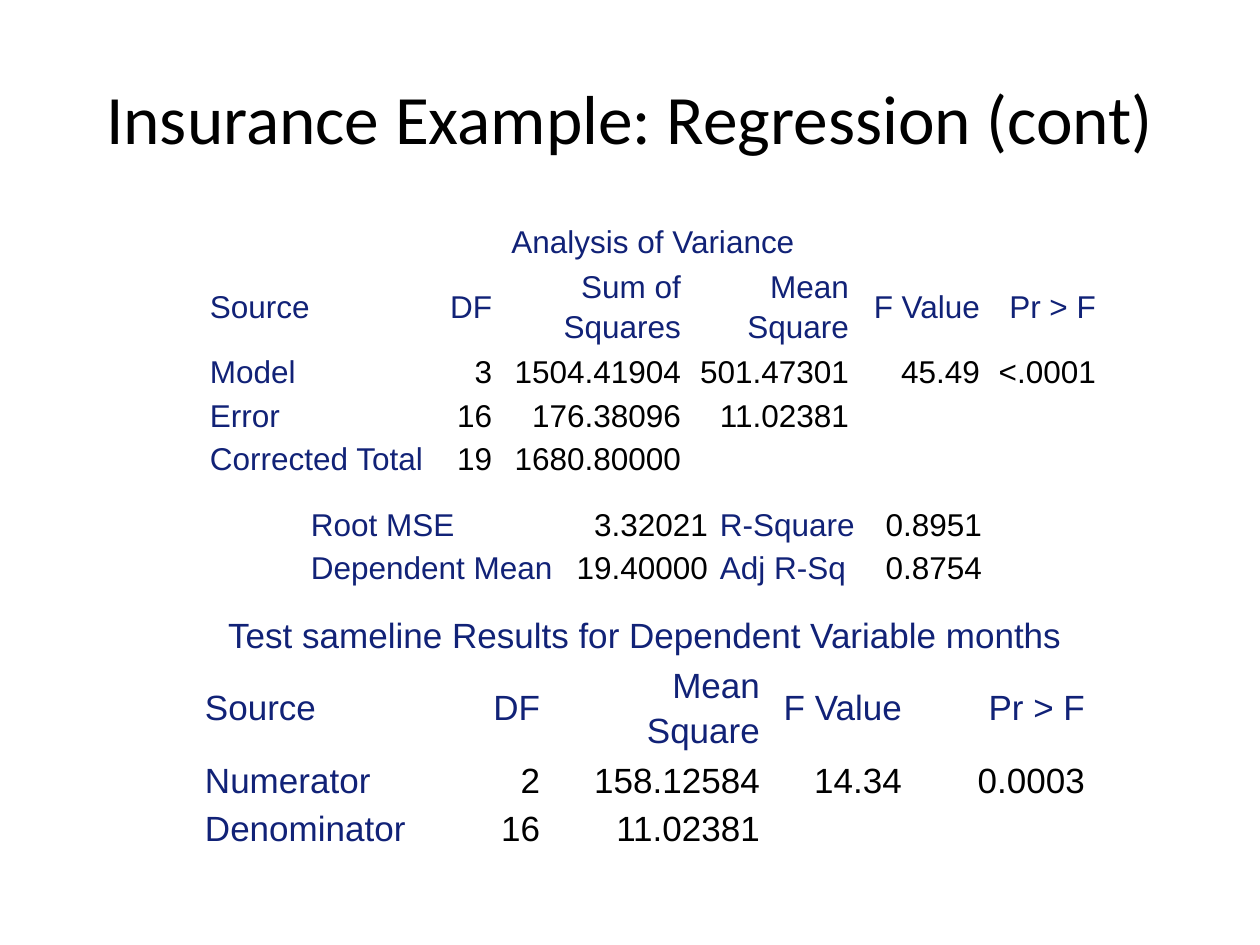
from pptx import Presentation
from pptx import util as u
from pptx.dml import color
from pptx.enum import text

SCALE = 914400 / 126
NAVY, BLACK = "112277", "000000"

ANOVA_ROWS = [
    ["Analysis of Variance"],
    ["Source", "DF", "Sum of\nSquares", "Mean\nSquare", "F Value", "Pr > F"],
    ["Model", "3", "1504.41904", "501.47301", "45.49", "<.0001"],
    ["Error", "16", "176.38096", "11.02381"],
    ["Corrected Total", "19", "1680.80000"],
]
FIT_ROWS = [
    ["Root MSE", "3.32021", "R-Square", "0.8951"],
    ["Dependent Mean", "19.40000", "Adj R-Sq", "0.8754"],
]
TEST_ROWS = [
    ["Test sameline Results for Dependent Variable months"],
    ["Source", "DF", "Mean\nSquare", "F Value", "Pr > F"],
    ["Numerator", "2", "158.12584", "14.34", "0.0003"],
    ["Denominator", "16", "11.02381"],
]


def px(value):
    """Turn px into EMU."""
    return u.Emu(round(value * SCALE))


def rgb(value):
    """Turn a hex string into a colour."""
    return color.RGBColor.from_string(value)


def apply(target, values):
    """Set each named attribute on the target."""
    for name, value in values.items():
        setattr(target, name, value)


def write(paragraph, words, size, font, hue, align):
    """Write formatted words into a paragraph."""
    paragraph.text = words
    paragraph.alignment = align
    for run in paragraph.runs:
        apply(run.font, {"size": u.Pt(size), "name": font})
        run.font.color.rgb = rgb(hue)


def add_title(slide, box, words):
    """Place the slide title in its box."""
    frame = slide.shapes.add_textbox(*map(px, box)).text_frame
    apply(frame, {"word_wrap": True, "vertical_anchor": text.MSO_ANCHOR.MIDDLE})
    write(frame.paragraphs[0], words, 39.6, "Calibri", BLACK, text.PP_ALIGN.CENTER)


def fill_cell(cell, words, size, align):
    """Format one cell, with figures in black and labels in navy."""
    cell.fill.background()
    apply(cell, {"margin_left": px(6), "margin_right": px(6), "margin_top": 0,
                 "margin_bottom": 0, "vertical_anchor": text.MSO_ANCHOR.MIDDLE})
    if words:
        paragraph = cell.text_frame.paragraphs[0]
        hue = BLACK if words[0] in "<0123456789" else NAVY
        write(paragraph, words, size, "Arial", hue, align)
        apply(paragraph, {"line_spacing": 1.15, "space_before": u.Pt(5),
                          "space_after": u.Pt(5)})


def add_results(slide, left, top, widths, line, size, rows, left_columns=(0,)):
    """Place a results table, merging any row that holds only a heading."""
    heights = [line * (2 if any("\n" in words for words in row) else 1) for row in rows]
    frame = slide.shapes.add_table(len(rows), len(widths), px(left), px(top),
                                   px(sum(widths)), px(sum(heights)))
    table = frame.table
    apply(table, {"first_row": False, "horz_banding": False})
    for column, width in zip(table.columns, widths):
        column.width = px(width)
    for r, (row, height) in enumerate(zip(rows, heights)):
        table.rows[r].height = px(height)
        heading = len(row) == 1
        if heading:
            table.cell(r, 0).merge(table.cell(r, len(widths) - 1))
        for c in range(len(widths)):
            align = text.PP_ALIGN.LEFT if c in left_columns else text.PP_ALIGN.RIGHT
            if heading:
                align = text.PP_ALIGN.CENTER
            fill_cell(table.cell(r, c), row[c] if c < len(row) else "", size, align)


def main():
    """Build and save the slide."""
    presentation = Presentation()
    apply(presentation, {"slide_width": px(1260), "slide_height": px(945)})
    slide = presentation.slides.add_slide(presentation.slide_layouts[6])
    add_title(slide, (63, 38, 1134, 158), "Insurance Example: Regression (cont)")
    add_results(slide, 199, 609, [241, 106, 220, 142, 183], 45, 20, TEST_ROWS)
    add_results(slide, 204, 218, [231, 63, 189, 168, 131, 116], 40, 18, ANOVA_ROWS)
    add_results(slide, 305, 501, [262, 147, 158, 116], 40, 18, FIT_ROWS, (0, 2))
    presentation.save("out.pptx")


if __name__ == "__main__":
    main()
